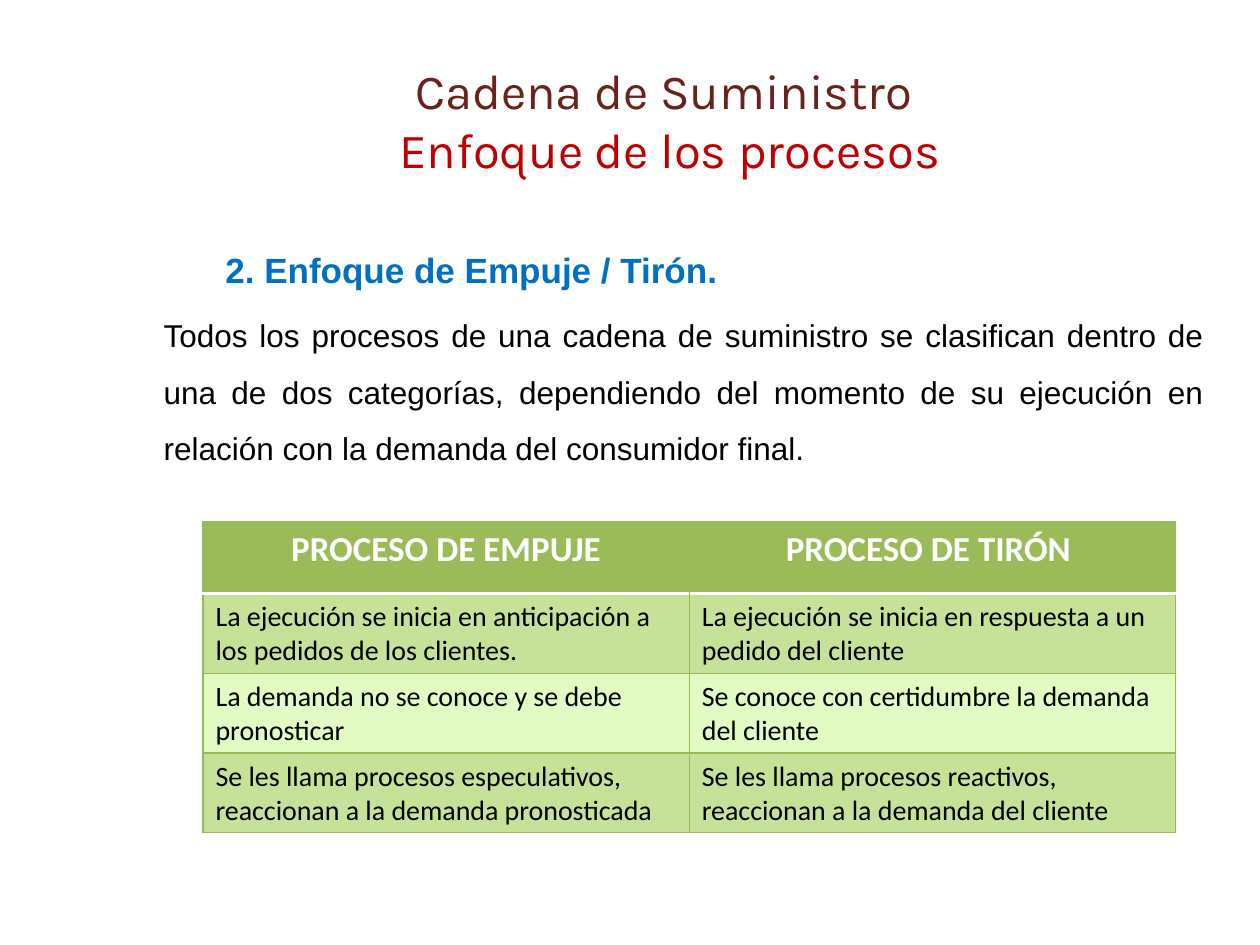
from lxml import etree
from pptx import Presentation
from pptx.dml.color import RGBColor
from pptx.enum.text import MSO_ANCHOR, MSO_AUTO_SIZE, PP_ALIGN
from pptx.oxml.ns import qn
from pptx.util import Pt

LEFT, MID, JUST = PP_ALIGN.LEFT, PP_ALIGN.CENTER, PP_ALIGN.JUSTIFY
TOP, MIDDLE = MSO_ANCHOR.TOP, MSO_ANCHOR.MIDDLE
GROW, FIXED = MSO_AUTO_SIZE.SHAPE_TO_FIT_TEXT, MSO_AUTO_SIZE.NONE

INK = {"brown": "6A221D", "red": "C00000", "blue": "0070C0", "black": "000000",
       "white": "FFFFFF", "head": "9BBB59", "band": "C6E198", "pale": "E2FBC2",
       "edge": "98B955"}

TITLE = [("Cadena de Suministro ", "brown"), ("Enfoque de los procesos", "red")]
HEADING = "2. Enfoque de Empuje / Tirón."
BODY = ("Todos los procesos de una cadena de suministro se clasifican dentro de "
        "una de dos categorías, dependiendo del momento de su ejecución en "
        "relación con la demanda del consumidor final. ")
ROWS = [
    ("PROCESO DE EMPUJE", "PROCESO DE TIRÓN "),
    ("La ejecución se inicia en anticipación a los pedidos de los clientes.",
     "La ejecución se inicia en respuesta a un pedido del cliente"),
    ("La demanda no se conoce y se debe pronosticar",
     "Se conoce con certidumbre la demanda del cliente"),
    ("Se les llama procesos especulativos, reaccionan a la demanda pronosticada",
     "Se les llama procesos reactivos, reaccionan a la demanda del cliente"),
]
GRID = (116, 298.1, 555.8)  # left, top, width
HEAD_H, ROW_H = 41, 45.6


def add_run(para, text, face, size, ink, bold=False):
    run = para.add_run()
    run.text = text
    font = run.font
    font.name, font.size, font.bold = face, Pt(size), bold
    font.color.rgb = RGBColor.from_string(INK[ink])


def add_box(slide, area, align, anchor=TOP, space=1.0, fit=GROW):
    """Add a wrapped text box and return its first paragraph."""
    frame = slide.shapes.add_textbox(*map(Pt, area)).text_frame
    frame.word_wrap = True
    frame.auto_size = fit
    frame.vertical_anchor = anchor
    para = frame.paragraphs[0]
    para.alignment, para.line_spacing = align, space
    return para


def add_edge(cell, side, ink, width):
    """Draw one cell border; a None ink hides it."""
    line = etree.SubElement(cell._tc.get_or_add_tcPr(), qn(f"a:ln{side}"),
                            w=str(Pt(width)))
    if ink is None:
        etree.SubElement(line, qn("a:noFill"))
    else:
        fill = etree.SubElement(line, qn("a:solidFill"))
        etree.SubElement(fill, qn("a:srgbClr"), val=INK[ink])


def style_cell(cell, row, col):
    edges = {side: ("edge", 0.75) for side in "LRTB"}
    if row == 0:
        edges["R" if col == 0 else "L"] = (None, 0.75)
        edges["B"] = ("white", 2)
    elif row == 1:
        edges["T"] = ("white", 2)
    for side, (ink, width) in edges.items():
        add_edge(cell, side, ink, width)
    shade = "head" if row == 0 else "band" if row % 2 else "pale"
    cell.fill.solid()
    cell.fill.fore_color.rgb = RGBColor.from_string(INK[shade])


def add_grid(slide):
    left, top, width = GRID
    high = HEAD_H + ROW_H * (len(ROWS) - 1)
    table = slide.shapes.add_table(len(ROWS), len(ROWS[0]), Pt(left), Pt(top),
                                   Pt(width), Pt(high)).table
    for row, texts in enumerate(ROWS):
        head = row == 0
        table.rows[row].height = Pt(HEAD_H if head else ROW_H)
        for col, text in enumerate(texts):
            cell = table.cell(row, col)
            style_cell(cell, row, col)
            para = cell.text_frame.paragraphs[0]
            para.alignment = MID if head else LEFT
            add_run(para, text, "Calibri", 20 if head else 16,
                    "white" if head else "black", head)


def main():
    deck = Presentation()
    deck.slide_width, deck.slide_height = Pt(720), Pt(540)
    slide = deck.slides.add_slide(deck.slide_layouts[6])

    title = add_box(slide, (107.3, 23, 550.8, 90), MID, MIDDLE, fit=FIXED)
    for i, (text, ink) in enumerate(TITLE):
        if i:
            title.add_line_break()
        add_run(title, text, "Karla", 28, ink)

    heading = add_box(slide, (121.7, 126.7, 334.8, 38.9), LEFT, space=1.5)
    add_run(heading, HEADING, "Arial", 20, "blue", True)
    body = add_box(slide, (86.4, 166.3, 608.4, 105.1), JUST, space=1.5)
    add_run(body, BODY, "Arial", 18, "black")

    add_grid(slide)
    deck.save("out.pptx")


if __name__ == "__main__":
    main()
